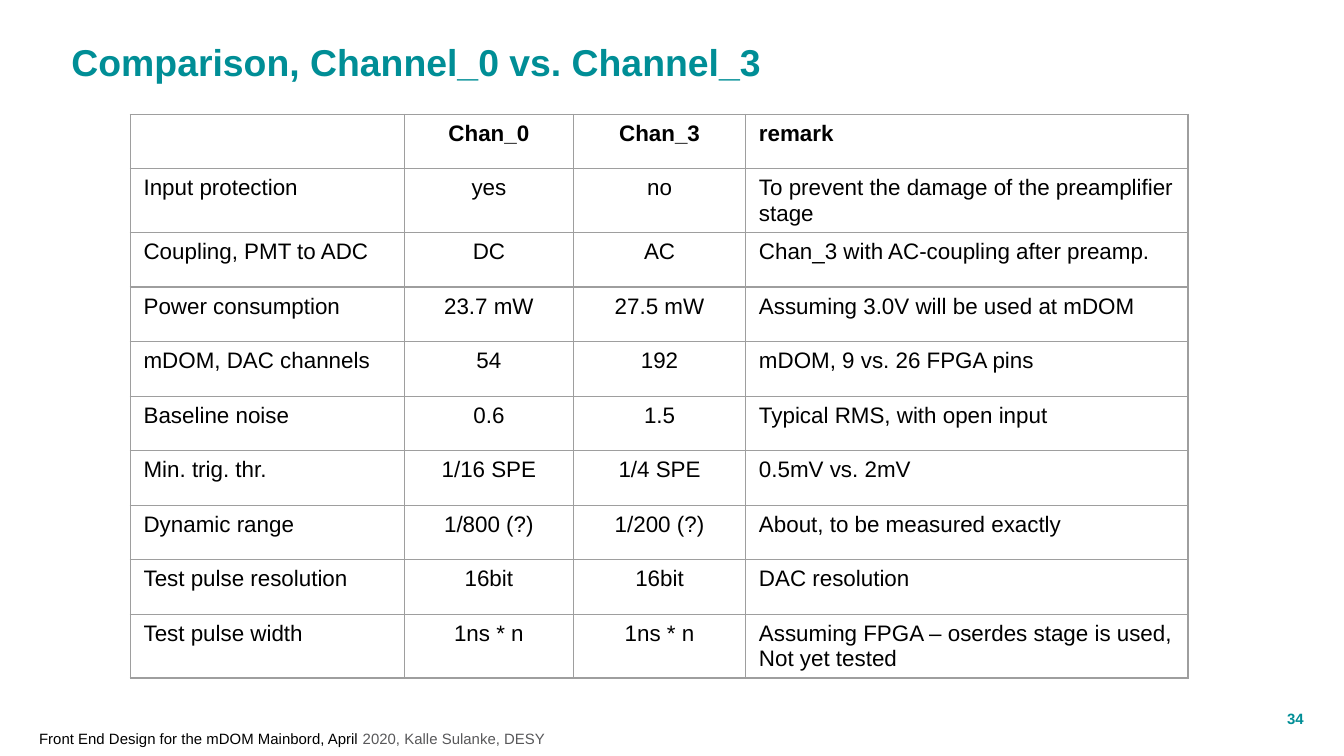
import pptx
import pptx.dml.color
import pptx.enum.text
import pptx.oxml
import pptx.oxml.ns
import pptx.util

Cm = pptx.util.Cm
Align = pptx.enum.text.PP_ALIGN
Anchor = pptx.enum.text.MSO_ANCHOR

COLORS = {"teal": "008E96", "black": "000000", "gray": "58585A", "border": "9E9E9E"}
COLUMN_WIDTHS = [5.18, 3.2, 3.25, 8.36]
ROW_HEIGHT = 1.03
ROWS = [
    ["", "Chan_0", "Chan_3", "remark"],
    ["Input protection", "yes", "no", "To prevent the damage of the preamplifier stage"],
    ["Coupling, PMT to ADC", "DC", "AC", "Chan_3 with AC-coupling after preamp."],
    ["Power consumption", "23.7 mW", "27.5 mW", "Assuming 3.0V will be used at mDOM"],
    ["mDOM, DAC channels", "54", "192", "mDOM, 9 vs. 26 FPGA pins"],
    ["Baseline noise", "0.6", "1.5", "Typical RMS, with open input"],
    ["Min. trig. thr.", "1/16 SPE", "1/4 SPE", "0.5mV vs. 2mV"],
    ["Dynamic range", "1/800 (?)", "1/200 (?)", "About, to be measured exactly"],
    ["Test pulse resolution", "16bit", "16bit", "DAC resolution"],
    ["Test pulse width", "1ns * n", "1ns * n",
     "Assuming FPGA – oserdes stage is used,\nNot yet tested"],
]


def write_text(para, text, size=12, color="black", bold=False, align=Align.LEFT):
    """Append one formatted span of text to a paragraph."""
    para.alignment = align
    span = para.add_run()
    span.text = text
    span.font.name = "Arial"
    span.font.size = pptx.util.Pt(size)
    span.font.bold = bold
    span.font.color.rgb = pptx.dml.color.RGBColor.from_string(COLORS[color])


def prepare_frame(box, anchor):
    """Give a box a wrapping text frame without margins and return its first paragraph."""
    frame = box.text_frame
    frame.word_wrap = True
    frame.auto_size = pptx.enum.text.MSO_AUTO_SIZE.NONE
    frame.vertical_anchor = anchor
    frame.margin_left = frame.margin_top = frame.margin_right = frame.margin_bottom = 0
    return frame.paragraphs[0]


def place_title(page, left, top, width, height):
    """Move and fill the title placeholder."""
    title = page.shapes.title
    title.left, title.top, title.width, title.height = left, top, width, height
    para = prepare_frame(title, Anchor.MIDDLE)
    para.line_spacing = 1.15
    write_text(para, "Comparison, Channel_0 vs. Channel_3", size=20, color="teal", bold=True)


def place_footer(page, left, top, width, height):
    """Place the two-coloured footer line."""
    para = prepare_frame(page.shapes.add_textbox(left, top, width, height), Anchor.BOTTOM)
    write_text(para, "Front End Design for the mDOM Mainbord, April ", size=8)
    write_text(para, "2020, Kalle Sulanke, DESY", size=8, color="gray")


def place_page_number(page, left, top, width, height):
    """Place the page number at the right edge."""
    para = prepare_frame(page.shapes.add_textbox(left, top, width, height), Anchor.BOTTOM)
    write_text(para, "34", size=8, color="teal", bold=True, align=Align.RIGHT)


def draw_borders(cell):
    """Outline all four sides of a table cell."""
    properties = cell._tc.get_or_add_tcPr()
    for index, side in enumerate(("lnL", "lnR", "lnT", "lnB")):
        properties.insert(index, pptx.oxml.parse_xml(
            f'<a:{side} {pptx.oxml.ns.nsdecls("a")} w="9525"><a:solidFill>'
            f'<a:srgbClr val="{COLORS["border"]}"/></a:solidFill></a:{side}>'))


def place_comparison(page, left, top, width, height):
    """Place the table that compares both channels."""
    table = page.shapes.add_table(len(ROWS), len(COLUMN_WIDTHS), left, top, width, height).table
    table.first_row = table.horz_banding = False
    for column, column_width in zip(table.columns, COLUMN_WIDTHS):
        column.width = Cm(column_width)
    for row_index, values in enumerate(ROWS):
        table.rows[row_index].height = Cm(ROW_HEIGHT)
        for column_index, value in enumerate(values):
            cell = table.cell(row_index, column_index)
            cell.fill.background()
            draw_borders(cell)
            align = Align.CENTER if column_index in (1, 2) else Align.LEFT
            for line_index, line in enumerate(value.splitlines()):
                frame = cell.text_frame
                para = frame.add_paragraph() if line_index else frame.paragraphs[0]
                write_text(para, line, bold=row_index == 0, align=align)


def main():
    """Build and save the deck."""
    deck = pptx.Presentation()
    deck.slide_width, deck.slide_height = Cm(25.4), Cm(14.28)
    page = deck.slides.add_slide(deck.slide_layouts[5])
    place_footer(page, Cm(0.74), Cm(13.74), Cm(17.53), Cm(0.38))
    place_title(page, Cm(1.35), Cm(0.51), Cm(18.92), Cm(1.19))
    place_page_number(page, Cm(23.65), Cm(13.28), Cm(0.99), Cm(0.46))
    place_comparison(page, Cm(2.46), Cm(2.16), Cm(sum(COLUMN_WIDTHS)), Cm(ROW_HEIGHT * len(ROWS)))
    deck.save("out.pptx")


if __name__ == "__main__":
    main()
